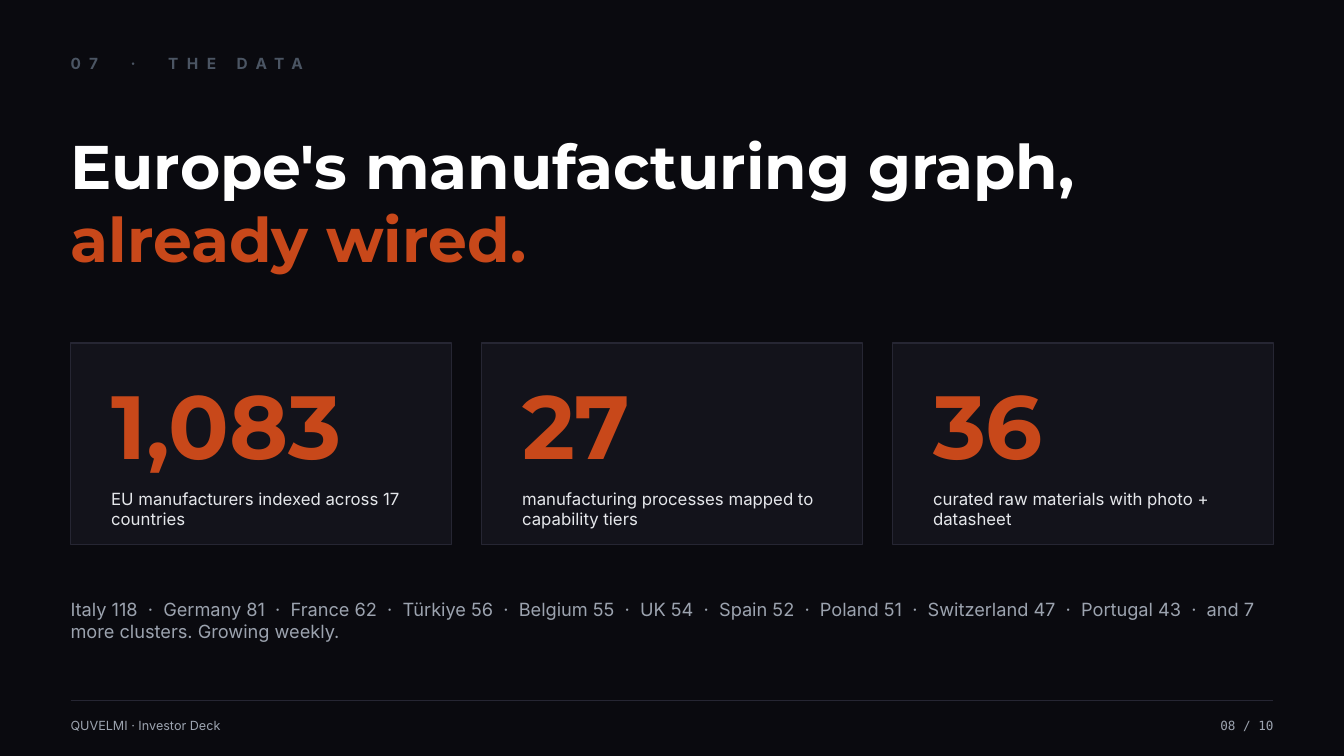
from lxml.etree import SubElement
from pptx import Presentation
from pptx.dml.color import RGBColor
from pptx.enum.shapes import MSO_CONNECTOR as Connector, MSO_SHAPE as Shape
from pptx.enum.text import MSO_ANCHOR as Anchor, PP_ALIGN as Align
from pptx.oxml.ns import qn
from pptx.util import Cm, Pt

WIDTH, HEIGHT = 33.87, 19.05
MARGIN = 1.78
CONTENT = WIDTH - 2 * MARGIN
GAP, PADDING = 0.76, 1.02
CARD_TOP, CARD_HEIGHT = 8.64, 5.08

STATS = [
    ("1,083", "EU manufacturers indexed across 17 countries"),
    ("27", "manufacturing processes mapped to capability tiers"),
    ("36", "curated raw materials with photo + datasheet"),
]
CLUSTERS = [
    "Italy 118", "Germany 81", "France 62", "Türkiye 56", "Belgium 55", "UK 54",
    "Spain 52", "Poland 51", "Switzerland 47", "Portugal 43",
    "and 7 more clusters. Growing weekly.",
]


def color(value):
    return RGBColor.from_string(value)


class PageBuilder:
    BACKGROUND, CARD, BORDER = "0A0A0F", "13131B", "262633"
    WHITE, ACCENT, LIGHT = "FFFFFF", "C8481A", "E5E7EB"
    GRAY, DIM = "9CA3AF", "4B5563"
    BODY, DISPLAY, MONO = "Inter", "Montserrat", "DejaVu Sans Mono"

    def __init__(self, deck):
        self.page = deck.slides.add_slide(deck.slide_layouts[6])
        fill = self.page.background.fill
        fill.solid()
        fill.fore_color.rgb = color(self.BACKGROUND)

    def text(self, left, top, width, height, lines, size, font=BODY,
             bold=False, align=Align.LEFT, spacing=0):
        """Draw (text, colour) lines as one paragraph."""
        box = self.page.shapes.add_textbox(Cm(left), Cm(top), Cm(width), Cm(height))
        frame = box.text_frame
        settings = {"word_wrap": True, "vertical_anchor": Anchor.MIDDLE,
                    "margin_left": 0, "margin_right": 0,
                    "margin_top": 0, "margin_bottom": 0}
        for name, value in settings.items():
            setattr(frame, name, value)
        para = frame.paragraphs[0]
        para.alignment = align
        for index, (words, tint) in enumerate(lines):
            if index:
                para.add_line_break()
            span = para.add_run()
            span.text = words
            for name, value in {"name": font, "size": Pt(size), "bold": bold}.items():
                setattr(span.font, name, value)
            span.font.color.rgb = color(tint)
            if spacing:
                span.font._element.set("spc", str(spacing * 100))

    def panel(self, left, top, width, height):
        panel = self.page.shapes.add_shape(
            Shape.RECTANGLE, Cm(left), Cm(top), Cm(width), Cm(height))
        panel.shadow.inherit = False
        panel.fill.solid()
        panel.fill.fore_color.rgb = color(self.CARD)
        panel.line.color.rgb = color(self.BORDER)
        panel.line.width = Pt(1)

    def rule(self, left, top, width):
        rule = self.page.shapes.add_connector(
            Connector.STRAIGHT, Cm(left), Cm(top), Cm(left + width), Cm(top))
        rule.line.color.rgb = color(self.BORDER)
        rule.line.width = Pt(0.5)
        SubElement(rule._element.spPr, qn("a:effectLst"))

    def stat_card(self, left, width, number, label):
        self.panel(left, CARD_TOP, width, CARD_HEIGHT)
        inner_left, inner_width = left + PADDING, width - 2 * PADDING
        self.text(inner_left, CARD_TOP + 0.76, inner_width, 2.54,
                  [(number, self.ACCENT)], 64, self.DISPLAY, bold=True)
        self.text(inner_left, CARD_TOP + 3.43, inner_width, 1.52,
                  [(label, self.LIGHT)], 12)


def main():
    deck = Presentation()
    deck.slide_width, deck.slide_height = Cm(WIDTH), Cm(HEIGHT)
    builder = PageBuilder(deck)

    # Section label and headline
    builder.text(MARGIN, 1.14, CONTENT, 0.89, [("07  ·  THE DATA", builder.DIM)],
                 11, bold=True, spacing=6)
    builder.text(MARGIN, 2.79, CONTENT, 4.57,
                 [("Europe's manufacturing graph,", builder.WHITE),
                  ("already wired.", builder.ACCENT)],
                 44, builder.DISPLAY, bold=True)

    # Statistic cards
    card_width = (CONTENT - GAP * (len(STATS) - 1)) / len(STATS)
    for index, (number, label) in enumerate(STATS):
        left = MARGIN + index * (card_width + GAP)
        builder.stat_card(left, card_width, number, label)

    # Country clusters
    builder.text(MARGIN, 14.48, CONTENT, 2.29,
                 [("  ·  ".join(CLUSTERS), builder.GRAY)], 13)

    # Footer
    builder.rule(MARGIN, 17.65, CONTENT)
    builder.text(MARGIN, 17.91, 10.16, 0.76,
                 [("QUVELMI · Investor Deck", builder.GRAY)], 9)
    builder.text(WIDTH - MARGIN - 3.81, 17.91, 3.81, 0.76,
                 [("08 / 10", builder.GRAY)], 9, builder.MONO, align=Align.RIGHT)

    deck.save("out.pptx")


if __name__ == "__main__":
    main()
